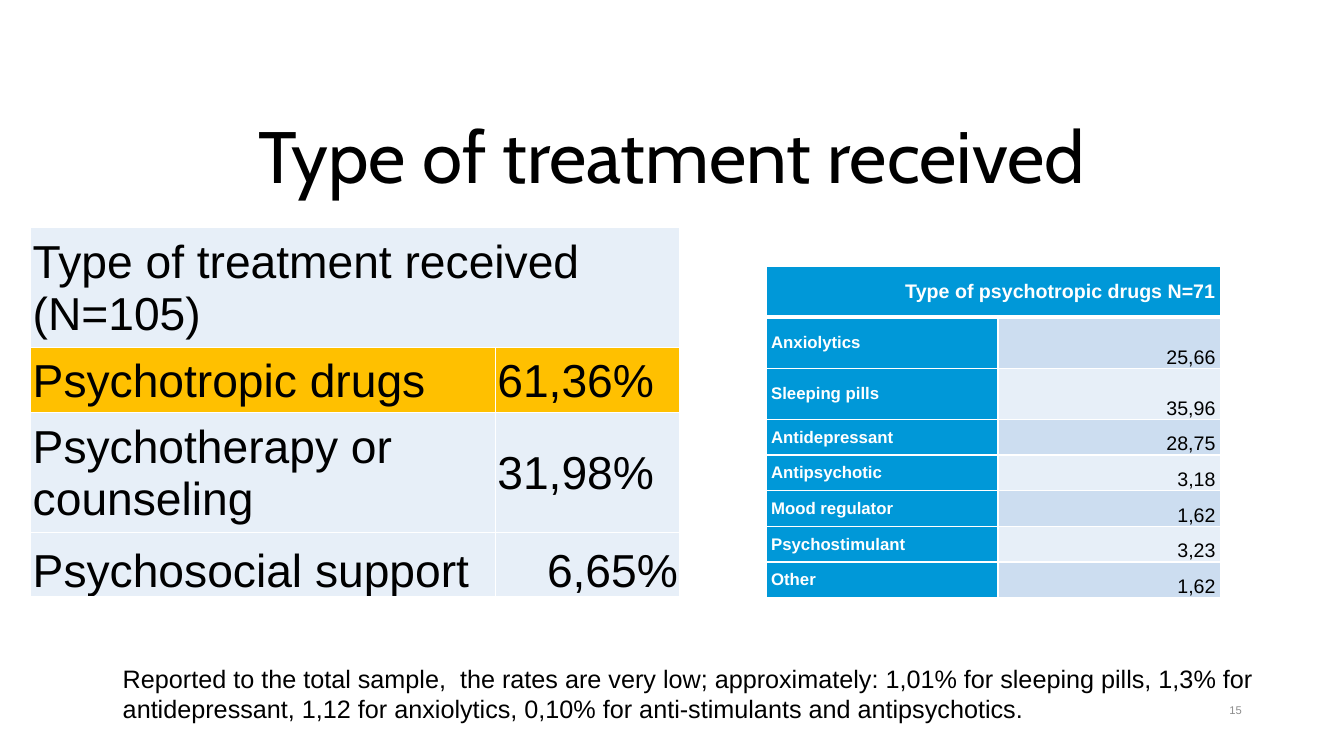
from lxml.etree import SubElement
from pptx import Presentation
from pptx.dml.color import RGBColor
from pptx.enum.text import MSO_ANCHOR, MSO_AUTO_SIZE, PP_ALIGN
from pptx.oxml.ns import qn
from pptx.util import Pt

COLORS = {"black": "000000", "white": "FFFFFF", "gray": "8C8C8C", "blue": "0098D8",
          "mid": "CCDDF0", "pale": "E7EFF8", "amber": "FFC000"}
LEFT, CENTER, RIGHT = PP_ALIGN.LEFT, PP_ALIGN.CENTER, PP_ALIGN.RIGHT
TOP, MIDDLE, BOTTOM = MSO_ANCHOR.TOP, MSO_ANCHOR.MIDDLE, MSO_ANCHOR.BOTTOM

TREATMENTS = [("Type of treatment received (N=105)", ""),
              ("Psychotropic drugs", "61,36%"),
              ("Psychotherapy or counseling", "31,98%"),
              ("Psychosocial support", "6,65%")]
DRUGS = [("Type of psychotropic drugs N=71", ""),
         ("Anxiolytics", "25,66"), ("Sleeping pills", "35,96"),
         ("Antidepressant", "28,75"), ("Antipsychotic", "3,18"),
         ("Mood regulator", "1,62"), ("Psychostimulant", "3,23"), ("Other", "1,62")]
NOTE = ("Reported to the total sample,  the rates are very low; approximately: "
        "1,01% for sleeping pills, 1,3% for antidepressant, 1,12 for anxiolytics, "
        "0,10% for anti-stimulants and antipsychotics.")


def color(name):
    return RGBColor.from_string(COLORS[name])


def write(tf, text, size=18, ink="black", bold=False, align=LEFT, font="Arial", spacing=None):
    p = tf.paragraphs[0]
    p.alignment, p.line_spacing = align, spacing
    r = p.add_run()
    r.text = text
    r.font.name, r.font.size, r.font.bold = font, Pt(size), bold
    r.font.color.rgb = color(ink)


class SlideBuilder:
    def __init__(self, s, font="Arial", title_font="Cabin"):
        self.s, self.font, self.title_font = s, font, title_font

    def title(self, text, box, size):
        sp = self.s.shapes.title
        sp.left, sp.top, sp.width, sp.height = (Pt(v) for v in box)
        tf = sp.text_frame
        tf.word_wrap, tf.auto_size, tf.vertical_anchor = True, MSO_AUTO_SIZE.NONE, BOTTOM
        write(tf, text, size=size, align=CENTER, font=self.title_font, spacing=0.9)

    def text(self, text, box, anchor=TOP, **fmt):
        tf = self.s.shapes.add_textbox(*(Pt(v) for v in box)).text_frame
        tf.word_wrap, tf.vertical_anchor = True, anchor
        write(tf, text, font=self.font, **fmt)

    def table(self, left, top, widths, heights):
        """Add a table whose first row is merged into one heading cell."""
        table = self.s.shapes.add_table(len(heights), len(widths), Pt(left), Pt(top),
                                        Pt(sum(widths)), Pt(sum(heights))).table
        for col, width in zip(table.columns, widths):
            col.width = Pt(width)
        for row, height in zip(table.rows, heights):
            row.height = Pt(height)
        table.cell(0, 0).merge(table.cell(0, len(widths) - 1))
        return table

    def cell(self, cell, text, fill, insets, anchor=MIDDLE, top=1, bottom=1, **fmt):
        """Format one cell; insets run left, top, right, bottom; top and bottom are line widths."""
        (cell.margin_left, cell.margin_top,
         cell.margin_right, cell.margin_bottom) = (Pt(v) for v in insets)
        cell.vertical_anchor = anchor
        tcPr = cell._tc.get_or_add_tcPr()
        for side, width in (("L", 1), ("R", 1), ("T", top), ("B", bottom)):
            ln = SubElement(tcPr, qn(f"a:ln{side}"), w=str(int(Pt(width))))
            SubElement(SubElement(ln, qn("a:solidFill")), qn("a:srgbClr"), val=COLORS["white"])
        cell.fill.solid()
        cell.fill.fore_color.rgb = color(fill)
        if text:
            write(cell.text_frame, text, font=self.font, **fmt)

    def treatment_table(self):
        table = self.table(22, 162.7, (331.9, 131.8), (85.7, 46.1, 85.7, 46.1))
        for i, row in enumerate(TREATMENTS):
            last = i == len(TREATMENTS) - 1
            for j, text in enumerate(row):
                self.cell(table.cell(i, j), text, "amber" if i == 1 else "pale",
                          (1.4, 1.4, 1.4, 0), BOTTOM if last else MIDDLE,
                          size=33, align=RIGHT if last and j else LEFT)

    def drug_table(self):
        table = self.table(547.2, 190.1, (165.6, 159.1), [36.5] * 3 + [25.5] * 5)
        for i, row in enumerate(DRUGS):
            heading = i == 0
            lines = {"top": 3 if i == 1 else 1, "bottom": 3 if heading else 1}
            for j, text in enumerate(row):
                if heading or j == 0:
                    look = {"fill": "blue", "ink": "white", "bold": True,
                            "size": 14 if heading else 12, "align": RIGHT if heading else LEFT}
                else:
                    look = {"fill": "mid" if i % 2 else "pale", "anchor": BOTTOM,
                            "size": 14, "align": RIGHT}
                self.cell(table.cell(i, j), text, insets=(3.6, 0, 3.6, 0), **lines, **look)


def main():
    prs = Presentation()
    prs.slide_width, prs.slide_height = Pt(960), Pt(540)
    page = SlideBuilder(prs.slides.add_slide(prs.slide_layouts[5]))
    page.text("15", (678.2, 492.5, 216, 28.8), MIDDLE, size=8, ink="gray", align=RIGHT)
    page.title("Type of treatment received", (66, 44, 828, 102.2), 52)
    page.treatment_table()
    page.drug_table()
    page.text(NOTE, (80.6, 470.2, 843.8, 51.1))
    prs.save("out.pptx")


if __name__ == "__main__":
    main()
